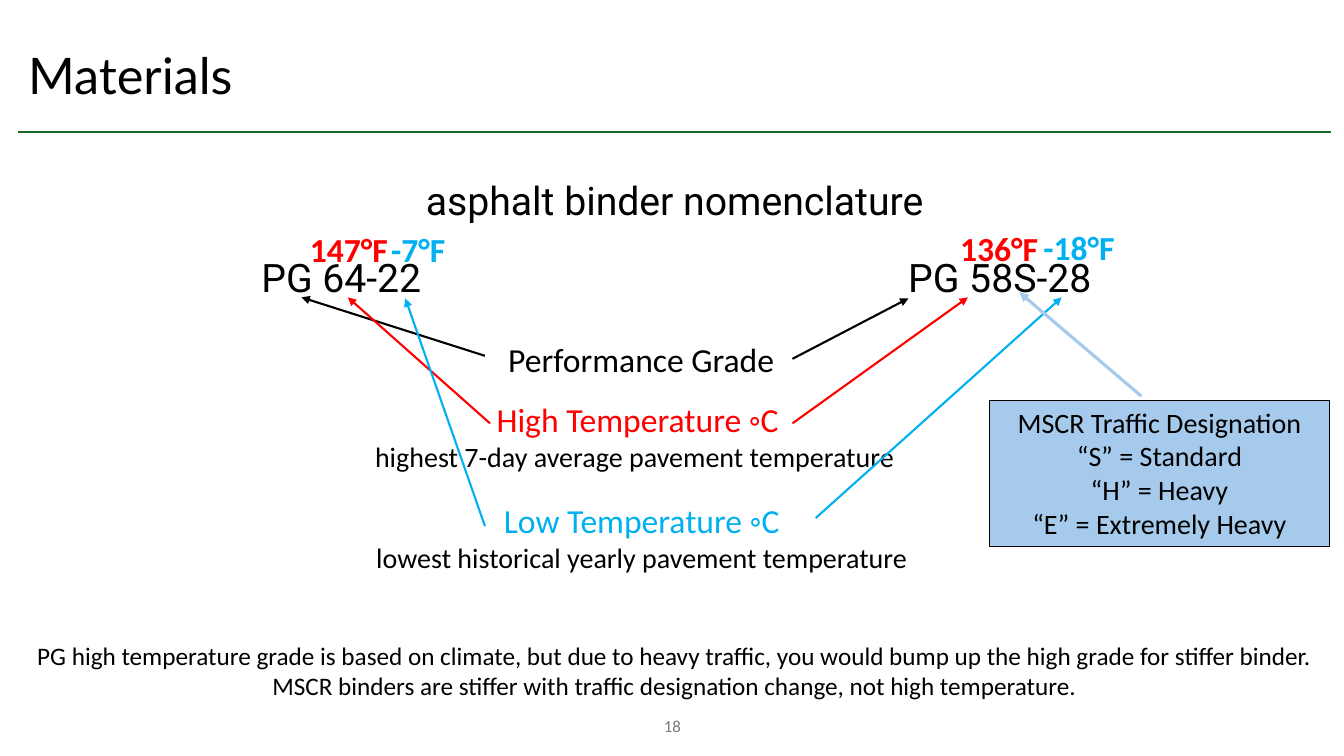
from lxml import etree
from pptx import Presentation
from pptx import util as u
from pptx.dml.color import RGBColor
from pptx.enum import shapes, text
from pptx.oxml import ns

COLORS = {
    "ink": "000000",
    "rule": "196B24",
    "high": "FF0000",
    "low": "00B0F0",
    "traffic": "A6CAEC",
    "number": "797979",
}
LEFT, WIDTH = 0.18, 13.02


def color(key):
    return RGBColor.from_string(COLORS[key])


def write(frame, lines, align="CENTER", anchor="TOP", wrap=True, spacing=None):
    """Fill a frame; each line is (wording, size, colour key, font, bold)."""
    frame.word_wrap = wrap
    frame.vertical_anchor = getattr(text.MSO_ANCHOR, anchor)
    for i, (wording, size, key, font, bold) in enumerate(lines):
        paragraph = frame.add_paragraph() if i else frame.paragraphs[0]
        paragraph.alignment = getattr(text.PP_ALIGN, align)
        if spacing:
            paragraph.line_spacing = spacing
        run = paragraph.add_run()
        run.text = wording
        run.font.size = u.Pt(size)
        run.font.name = font
        run.font.bold = bold
        run.font.color.rgb = color(key)


def line(wording, size, key="ink", font="Calibri", bold=False):
    return wording, size, key, font, bold


def label(slide, box, lines, **layout):
    holder = slide.shapes.add_textbox(*map(u.Inches, box))
    write(holder.text_frame, lines, **layout)


def connect(slide, start, end, key, weight=1.5, arrow=True):
    link = slide.shapes.add_connector(
        shapes.MSO_CONNECTOR.STRAIGHT, *map(u.Inches, (*start, *end)))
    link.line.color.rgb = color(key)
    link.line.width = u.Pt(weight)
    if arrow:
        head = etree.SubElement(link.line._get_or_add_ln(), ns.qn("a:tailEnd"))
        head.set("type", "triangle")
    etree.SubElement(link._element.spPr, ns.qn("a:effectLst"))


def add_header(slide, box):
    left, top, width, height = box
    bottom = top + height + 0.15
    connect(slide, (left, bottom), (left + width, bottom), "rule", arrow=False)
    label(slide, box, [line("Materials", 36, font="Lato")],
          align="LEFT", anchor="MIDDLE", spacing=0.9)


def add_grade(slide, box, grade, high, low):
    """A binder grade with its temperatures above; high and low are
    (wording, x offset, y offset, width)."""
    left, top = box[:2]
    label(slide, box, [line(grade, 28, font="Roboto")], spacing=0.9)
    for (wording, dx, dy, width), key, align in (
            (high, "high", "CENTER"), (low, "low", "LEFT")):
        label(slide, (left + dx, top + dy, width, 0.5),
              [line(wording, 24, key, bold=True)],
              align=align, wrap=key == "high")


def add_meaning(slide, box, term, key, detail, arrows):
    """A term of the grade, its explanation and arrows to both grades."""
    lines = [line(term, 24, key)]
    if detail:
        lines.append(line(detail, 20))
    label(slide, box, lines, wrap=not detail)
    for start, end in arrows:
        connect(slide, start, end, key)


def add_traffic_box(slide, box, target):
    left, top, width, height = box
    panel = slide.shapes.add_shape(
        shapes.MSO_SHAPE.RECTANGLE, *map(u.Inches, box))
    panel.shadow.inherit = False
    panel.fill.solid()
    panel.fill.fore_color.rgb = color("traffic")
    panel.line.color.rgb = color("ink")
    panel.line.width = u.Pt(0.75)
    write(panel.text_frame, [line(wording, 20) for wording in (
        "MSCR Traffic Designation", "“S” = Standard",
        "“H” = Heavy", "“E” = Extremely Heavy")])
    connect(slide, (left + 1.51, top - 0.04), target, "traffic", 2.25)


def add_footer(slide, box):
    left, top, width, height = box
    label(slide, box, [line(wording, 18) for wording in (
        "PG high temperature grade is based on climate, but due to heavy "
        "traffic, you would bump up the high grade for stiffer binder.",
        "MSCR binders are stiffer with traffic designation change, "
        "not high temperature.")])
    label(slide, (left + 4.99, top + 0.7, 3, 0.4),
          [line("18", 12, "number")], anchor="MIDDLE")


def main():
    deck = Presentation()
    deck.slide_width, deck.slide_height = u.Inches(13.33), u.Inches(7.5)
    slide = deck.slides.add_slide(deck.slide_layouts[6])

    # Title and topic
    add_header(slide, (LEFT, 0.4, WIDTH, 0.76))
    label(slide, (LEFT, 1.75, WIDTH, 0.76),
          [line("asphalt binder nomenclature", 28, font="Roboto")], spacing=0.9)

    # The two grades
    add_grade(slide, (LEFT, 2.52, 6.41, 0.64), "PG 64-22",
              ("147°F", 2.79, -0.3, 0.98), ("-7°F", 3.6, -0.3, 0.75))
    add_grade(slide, (6.69, 2.52, 6.45, 0.64), "PG 58S-28",
              ("136°F", 2.73, -0.31, 0.98), ("-18°F", 3.56, -0.32, 0.92))

    # What each part of a grade means
    add_meaning(slide, (4.86, 3.31, 3, 0.5), "Performance Grade", "ink", None,
                [((7.86, 3.56), (9.01, 2.96)), ((4.81, 3.53), (2.99, 2.95))])
    add_meaning(slide, (3.58, 3.91, 5.49, 0.84), "High Temperature ◦C", "high",
                "highest 7-day average pavement temperature ",
                [((7.86, 4.2), (9.6, 2.95)), ((4.86, 4.2), (3.45, 2.95))])
    add_meaning(slide, (3.56, 4.91, 5.61, 0.84), "Low Temperature ◦C", "low",
                "lowest historical yearly pavement temperature",
                [((8.09, 5.14), (10.53, 2.95)), ((4.81, 5.22), (4.02, 2.96))])

    # Traffic designation and closing remarks
    add_traffic_box(slide, (9.81, 3.97, 3.38, 1.45), (10.11, 2.9))
    add_footer(slide, (LEFT, 6.3, WIDTH, 0.71))
    deck.save("out.pptx")


if __name__ == "__main__":
    main()
